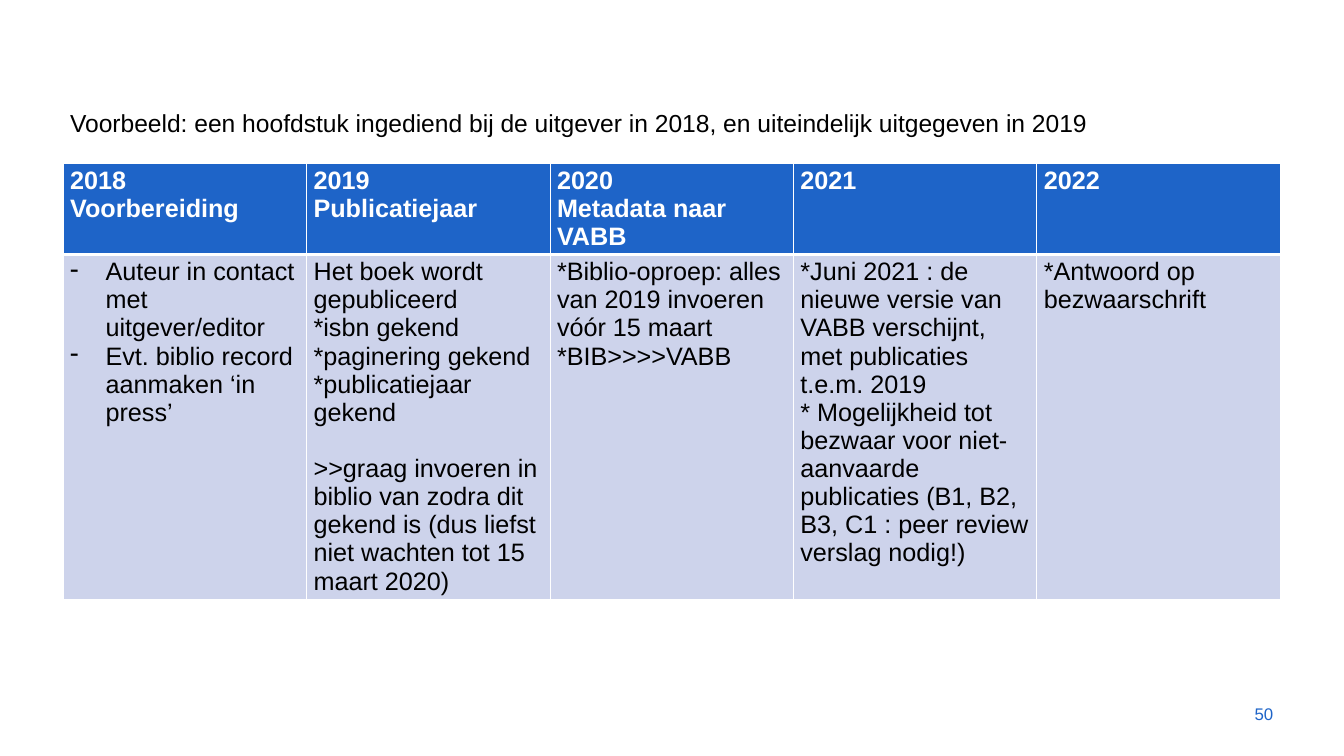
from dataclasses import dataclass

from lxml import etree
from pptx import Presentation
from pptx.dml.color import RGBColor
from pptx.enum.text import MSO_ANCHOR, PP_ALIGN
from pptx.oxml.ns import qn
from pptx.util import Inches, Pt

LEFT, RIGHT = PP_ALIGN.LEFT, PP_ALIGN.RIGHT
TOP, MIDDLE = MSO_ANCHOR.TOP, MSO_ANCHOR.MIDDLE
BLUE, PALE, WHITE, BLACK = "1E64C8", "CDD3EB", "FFFFFF", "000000"
TABLE_WIDTH = 17.17
ROW_HEIGHTS = (1.27, 4.87)
HEADER_FONT = {"name": "Arial", "size": Pt(25.6), "bold": True}
BODY_FONT = {**HEADER_FONT, "bold": False}
HEADER_BORDERS = {"lnL": 1, "lnR": 1, "lnT": 1, "lnB": 3}
BODY_BORDERS = {"lnL": 1, "lnR": 1, "lnT": 3, "lnB": 1}


@dataclass
class Line:
    text: str
    dash: bool = False
    before: float = 0


@dataclass
class Year:
    header: list[Line]
    body: list[Line]


@dataclass
class Label:
    text: str
    box: tuple[float, float, float, float]
    size: float
    color: str
    align: PP_ALIGN = LEFT
    anchor: MSO_ANCHOR = TOP
    spacing: float = 1.0
    wrap: bool = True


YEARS = [
    Year([Line("2018"), Line("Voorbereiding")],
         [Line("Auteur in contact met uitgever/editor", dash=True),
          Line("Evt. biblio record aanmaken ‘in press’", dash=True)]),
    Year([Line("2019"), Line("Publicatiejaar")],
         [Line("Het boek wordt gepubliceerd"),
          Line("*isbn gekend"),
          Line("*paginering gekend"),
          Line("*publicatiejaar gekend"),
          Line(">>graag invoeren in biblio van zodra dit gekend is "
               "(dus liefst niet wachten tot 15 maart 2020)", before=28.6)]),
    Year([Line("2020"), Line("Metadata naar VABB")],
         [Line("*Biblio-oproep: alles van 2019 invoeren vóór 15 maart"),
          Line("*BIB>>>>VABB")]),
    Year([Line("2021")],
         [Line("*Juni 2021 : de nieuwe versie van VABB verschijnt, "
               "met publicaties t.e.m. 2019"),
          Line("* Mogelijkheid tot bezwaar voor niet-aanvaarde publicaties "
               "(B1, B2, B3, C1 : peer review verslag nodig!)")]),
    Year([Line("2022")], [Line("*Antwoord op bezwaarschrift")]),
]

LABELS = [
    Label("50", (17.05, 9.79, 1.01, 0.57), 17.1, BLUE, RIGHT, MIDDLE),
    Label("Voorbeeld: een hoofdstuk ingediend bij de uitgever in 2018, "
          "en uiteindelijk uitgegeven in 2019",
          (0.89, 1.39, 14.69, 0.56), 25, BLACK, spacing=1.2, wrap=False),
]


def rgb(color: str) -> RGBColor:
    return RGBColor.from_string(color)


def set_attrs(target, values: dict) -> None:
    for name, value in values.items():
        setattr(target, name, value)


def add_run(p, text: str, font: dict, color: str) -> None:
    r = p.add_run()
    r.text = text
    set_attrs(r.font, font)
    r.font.color.rgb = rgb(color)


def add_dash(p) -> None:
    pPr = p._p.get_or_add_pPr()
    pPr.set("marL", str(Inches(0.5)))
    pPr.set("indent", str(Inches(-0.5)))
    etree.SubElement(pPr, qn("a:buChar"), char="-")


def add_borders(cell, widths: dict[str, float]) -> None:
    tcPr = cell._tc.get_or_add_tcPr()
    for side, width in widths.items():
        ln = etree.SubElement(tcPr, qn(f"a:{side}"), w=str(Pt(width)))
        fill = etree.SubElement(ln, qn("a:solidFill"))
        etree.SubElement(fill, qn("a:srgbClr"), val=WHITE)


def fill_cell(cell, lines: list[Line], font: dict, color: str,
              fill: str, borders: dict[str, float]) -> None:
    add_borders(cell, borders)
    cell.fill.solid()
    cell.fill.fore_color.rgb = rgb(fill)
    tf = cell.text_frame
    for i, line in enumerate(lines):
        p = tf.add_paragraph() if i else tf.paragraphs[0]
        if line.before:
            p.space_before = Pt(line.before)
        if line.dash:
            add_dash(p)
        add_run(p, line.text, font, color)


def add_timeline(s) -> None:
    table = s.shapes.add_table(
        len(ROW_HEIGHTS), len(YEARS), Inches(0.89), Inches(2.3),
        Inches(TABLE_WIDTH), Inches(sum(ROW_HEIGHTS))).table
    for row, height in zip(table.rows, ROW_HEIGHTS):
        row.height = Inches(height)
    for i, year in enumerate(YEARS):
        table.columns[i].width = Inches(TABLE_WIDTH / len(YEARS))
        fill_cell(table.cell(0, i), year.header, HEADER_FONT, WHITE, BLUE, HEADER_BORDERS)
        fill_cell(table.cell(1, i), year.body, BODY_FONT, BLACK, PALE, BODY_BORDERS)


def add_label(s, label: Label) -> None:
    tf = s.shapes.add_textbox(*map(Inches, label.box)).text_frame
    set_attrs(tf, {"word_wrap": label.wrap, "vertical_anchor": label.anchor})
    p = tf.paragraphs[0]
    set_attrs(p, {"alignment": label.align, "line_spacing": label.spacing})
    add_run(p, label.text, {"name": "Arial", "size": Pt(label.size)}, label.color)


def main() -> None:
    prs = Presentation()
    prs.slide_width, prs.slide_height = Inches(18.96), Inches(10.67)
    s = prs.slides.add_slide(prs.slide_layouts[6])
    add_timeline(s)
    for label in LABELS:
        add_label(s, label)
    prs.save("out.pptx")


if __name__ == "__main__":
    main()
